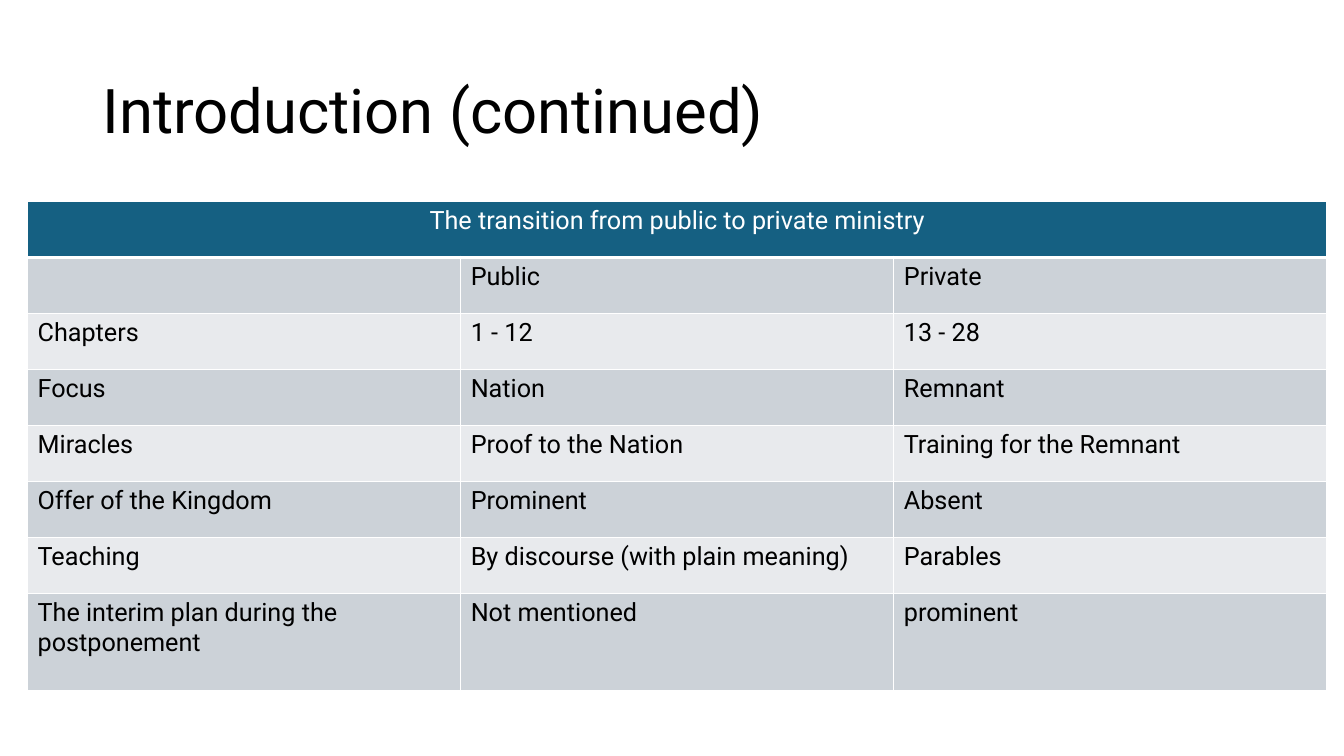
from lxml.etree import SubElement
from pptx import Presentation
from pptx.dml.color import RGBColor
from pptx.enum.text import MSO_ANCHOR as Anchor, PP_ALIGN as Align
from pptx.oxml.ns import qn
from pptx.util import Pt

BLACK = RGBColor(0x00, 0x00, 0x00)
WHITE = RGBColor(0xFF, 0xFF, 0xFF)
TEAL = RGBColor(0x15, 0x60, 0x82)
DARK_BAND = RGBColor(0xCC, 0xD2, 0xD8)
LIGHT_BAND = RGBColor(0xE8, 0xEA, 0xED)

HEADING = "The transition from public to private ministry"
MINISTRY_ROWS = [
    ("", "Public", "Private"),
    ("Chapters", "1 - 12", "13 - 28"),
    ("Focus", "Nation", "Remnant"),
    ("Miracles", "Proof to the Nation", "Training for the Remnant"),
    ("Offer of the Kingdom", "Prominent", "Absent"),
    ("Teaching", "By discourse (with plain meaning)", "Parables"),
    ("The interim plan during the postponement", "Not mentioned", "prominent"),
]


class SlideBuilder:
    font_name = "Roboto"

    def __init__(self, presentation):
        self.slide = presentation.slides.add_slide(presentation.slide_layouts[5])

    def format_text(self, text_frame, size, color, align=Align.LEFT):
        for paragraph in text_frame.paragraphs:
            paragraph.alignment = align
            for run in paragraph.runs:
                run.font.name = self.font_name
                run.font.size = Pt(size)
                run.font.color.rgb = color

    def title(self, text, left, top, width, height):
        title = self.slide.shapes.title
        title.left, title.top = Pt(left), Pt(top)
        title.width, title.height = Pt(width), Pt(height)
        text_frame = title.text_frame
        text_frame.text = text
        text_frame.word_wrap = True
        text_frame.vertical_anchor = Anchor.MIDDLE
        text_frame.paragraphs[0].line_spacing = 0.9
        self.format_text(text_frame, 44, BLACK)

    def borders(self, cell, bottom_width):
        properties = cell._tc.get_or_add_tcPr()
        for side, width in (("L", 1), ("R", 1), ("T", 1), ("B", bottom_width)):
            line = SubElement(properties, qn(f"a:ln{side}"), w=str(Pt(width)))
            fill = SubElement(line, qn("a:solidFill"))
            SubElement(fill, qn("a:srgbClr"), val=str(WHITE))

    def cell(self, cell, text, fill, color=BLACK, align=Align.LEFT, bottom_width=1):
        self.borders(cell, bottom_width)
        cell.fill.solid()
        cell.fill.fore_color.rgb = fill
        cell.text_frame.text = text
        self.format_text(cell.text_frame, 18, color, align)

    def table(self, heading, rows, left, top, column_width, row_heights):
        column_count = len(rows[0])
        table = self.slide.shapes.add_table(
            len(rows) + 1, column_count, Pt(left), Pt(top),
            Pt(column_width * column_count), Pt(sum(row_heights))).table
        for column in table.columns:
            column.width = Pt(column_width)
        for row, height in zip(table.rows, row_heights):
            row.height = Pt(height)
        table.cell(0, 0).merge(table.cell(0, column_count - 1))
        for column_index in range(column_count):
            self.cell(table.cell(0, column_index), "" if column_index else heading,
                      TEAL, WHITE, Align.CENTER, 3)
        for row_index, texts in enumerate(rows, 1):
            band = DARK_BAND if row_index % 2 else LIGHT_BAND
            for column_index, text in enumerate(texts):
                self.cell(table.cell(row_index, column_index), text, band)


def main():
    presentation = Presentation()
    presentation.slide_width, presentation.slide_height = Pt(960), Pt(540)
    builder = SlideBuilder(presentation)
    builder.title("Introduction (continued)", 66, 28.75, 828, 104.4)
    builder.table(HEADING, MINISTRY_ROWS, 19.7, 144, 309.4, [40] * 7 + [69])
    presentation.save("out.pptx")


if __name__ == "__main__":
    main()
